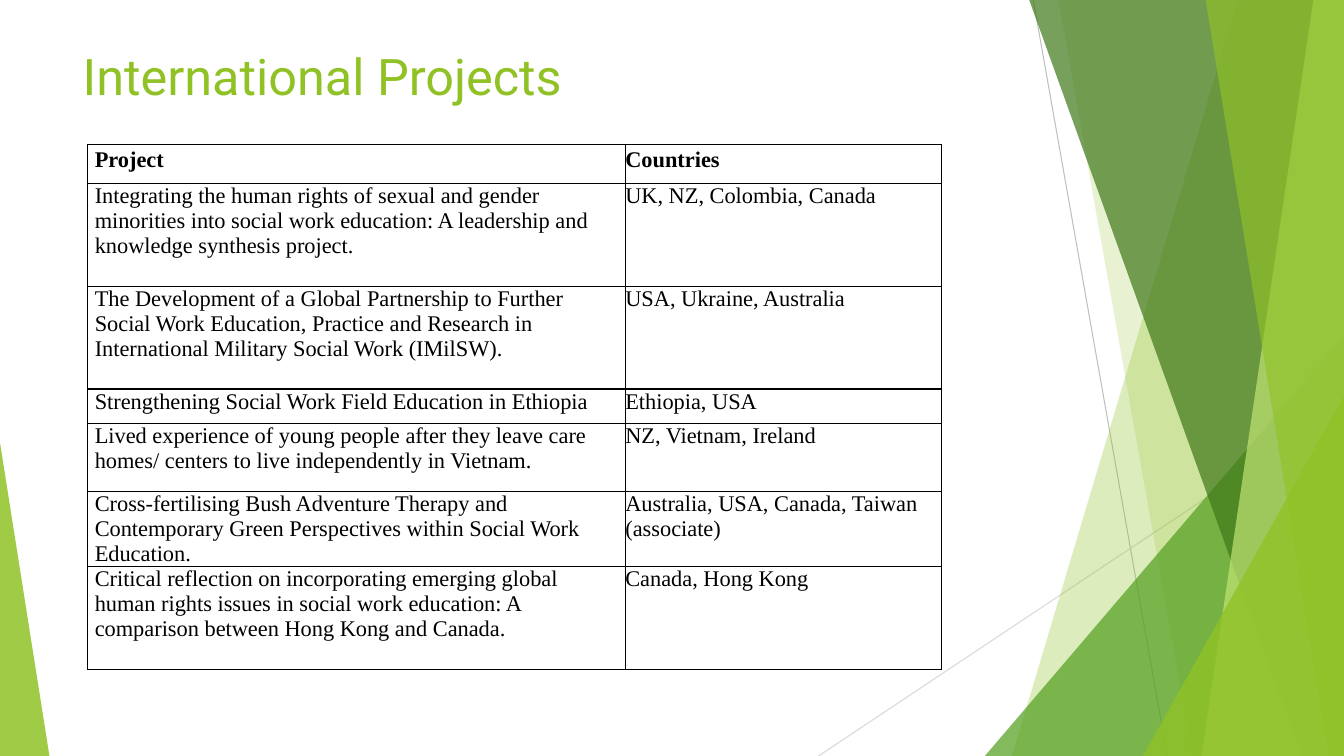
import lxml.etree
import pptx
import pptx.dml.color
import pptx.enum.shapes
import pptx.enum.text
import pptx.oxml.ns
import pptx.util

LIME, GREEN, FOREST, PALE = "90C226", "54A021", "3F7819", "C0E474"

PROJECTS = [
    ("Project", "Countries"),
    ("Integrating the human rights of sexual and gender minorities into social work education: "
     "A leadership and knowledge synthesis project.", "UK, NZ, Colombia, Canada"),
    ("The Development of a Global Partnership to Further Social Work Education, Practice and "
     "Research in International Military Social Work (IMilSW).", "USA, Ukraine, Australia"),
    ("Strengthening Social Work Field Education in Ethiopia", "Ethiopia, USA"),
    ("Lived experience of young people after they leave care homes/ centers to live "
     "independently in Vietnam.", "NZ, Vietnam, Ireland"),
    ("Cross-fertilising Bush Adventure Therapy and Contemporary Green Perspectives within "
     "Social Work Education.", "Australia, USA, Canada, Taiwan (associate)"),
    ("Critical reflection on incorporating emerging global human rights issues in social work "
     "education: A comparison between Hong Kong and Canada.", "Canada, Hong Kong"),
]


def rgb(color):
    return pptx.dml.color.RGBColor.from_string(color)


def add_xml(parent, tag, **attributes):
    return lxml.etree.SubElement(parent, pptx.oxml.ns.qn(tag), attributes)


class ProjectSlide:
    """Places elements by percentages of the slide's width and height."""

    title_font, table_font = "Roboto", "Times New Roman"

    def __init__(self, deck):
        self.width, self.height = deck.slide_width, deck.slide_height
        self.slide = deck.slides.add_slide(deck.slide_layouts[5])
        self.shapes = self.slide.shapes

    def x(self, share):
        return round(self.width * share / 100)

    def y(self, share):
        return round(self.height * share / 100)

    def box(self, left, top, width, height):
        return self.x(left), self.y(top), self.x(width), self.y(height)

    def style_run(self, run, font, size, color, bold=False):
        run.font.name, run.font.size, run.font.bold = font, pptx.util.Pt(size), bold
        run.font.color.rgb = rgb(color)

    def line(self, start, end, color):
        ray = self.shapes.add_connector(
            pptx.enum.shapes.MSO_CONNECTOR.STRAIGHT,
            self.x(start[0]), self.y(start[1]), self.x(end[0]), self.y(end[1]))
        ray.line.color.rgb = rgb(color)
        ray.line.width = pptx.util.Pt(0.75)
        add_xml(ray._element.spPr, "a:effectLst")

    def tint(self, shape, color, opacity):
        """Gives a shape a see-through fill, with no outline or shadow."""
        shape.shadow.inherit = False
        shape.line.fill.background()
        shape.fill.solid()
        shape.fill.fore_color.rgb = rgb(color)
        fill_color = shape._element.spPr.find(".//" + pptx.oxml.ns.qn("a:srgbClr"))
        add_xml(fill_color, "a:alpha", val=str(opacity * 1000))

    def band(self, top, bottom, color, opacity):
        """Fills from a slanted left edge to the right side of the slide."""
        outline = self.shapes.build_freeform(self.x(top), 0, scale=1.0)
        outline.add_line_segments(
            [(self.width, 0), (self.width, self.height), (self.x(bottom), self.height)],
            close=True)
        self.tint(outline.convert_to_shape(), color, opacity)

    def wedge(self, left, top, width, apex, color, opacity):
        """Draws a triangle standing on the slide's bottom edge."""
        triangle = self.shapes.add_shape(
            pptx.enum.shapes.MSO_SHAPE.ISOSCELES_TRIANGLE,
            *self.box(left, top, width, 100 - top))
        triangle.adjustments[0] = apex
        self.tint(triangle, color, opacity)

    def title(self, wording, *place):
        heading = self.shapes.title
        heading.left, heading.top, heading.width, heading.height = self.box(*place)
        frame = heading.text_frame
        frame.text = wording
        frame.vertical_anchor = pptx.enum.text.MSO_ANCHOR.TOP
        frame.auto_size = pptx.enum.text.MSO_AUTO_SIZE.NONE
        frame.paragraphs[0].alignment = pptx.enum.text.PP_ALIGN.LEFT
        self.style_run(frame.paragraphs[0].runs[0], self.title_font, 36, LIME)

    def border(self, cell, color="000000"):
        properties = cell._tc.get_or_add_tcPr()
        for position, side in enumerate(("a:lnL", "a:lnR", "a:lnT", "a:lnB")):
            edge = add_xml(properties, side, w=str(pptx.util.Pt(1)))
            add_xml(add_xml(edge, "a:solidFill"), "a:srgbClr", val=color)
            properties.insert(position, edge)

    def cell(self, cell, wording, inset, header):
        cell.text_frame.text = wording
        cell.margin_left = cell.margin_right = pptx.util.Inches(inset)
        cell.margin_top = cell.margin_bottom = 0
        cell.fill.background()
        self.border(cell)
        paragraph = cell.text_frame.paragraphs[0]
        if header:
            paragraph.line_spacing = 1.15
        self.style_run(paragraph.runs[0], self.table_font, 16, "000000", header)

    def table(self, rows, left, top, widths, heights):
        grid = self.shapes.add_table(
            len(rows), len(widths), *self.box(left, top, sum(widths), sum(heights))).table
        grid.first_row = grid.horz_banding = False
        for column, width in zip(grid.columns, widths):
            column.width = self.x(width)
        for index, (row, height) in enumerate(zip(grid.rows, heights)):
            row.height = self.y(height)
            for cell, wording, inset in zip(row.cells, rows[index], (0.07, 0)):
                self.cell(cell, wording, inset, header=index == 0)


def main():
    deck = pptx.Presentation()
    deck.slide_width, deck.slide_height = pptx.util.Inches(13.33), pptx.util.Inches(7.5)
    page = ProjectSlide(deck)

    page.line((76.88, 0), (86.85, 100), "BFBFBF")
    page.line((100, 53.73), (60.9, 100), "D9D9D9")
    page.band(92.1, 75.3, LIME, 30)
    page.band(78.75, 88.73, LIME, 20)
    page.wedge(73.28, 44.4, 26.72, 1, GREEN, 72)
    page.band(76.58, 96.83, FOREST, 70)
    page.band(97.72, 89.4, PALE, 70)
    page.band(89.7, 98.87, LIME, 65)
    page.wedge(85.05, 52.4, 14.95, 1, LIME, 80)
    page.wedge(0, 58.53, 3.68, 0, LIME, 85)

    page.title("International Projects", 5.4, 5.33, 42, 24.67)
    page.table(PROJECTS, 6.53, 19.07, widths=(40, 23.55),
               heights=(5.2, 13.6, 13.6, 4.53, 9.07, 9.07, 13.6))
    deck.save("out.pptx")


if __name__ == "__main__":
    main()
